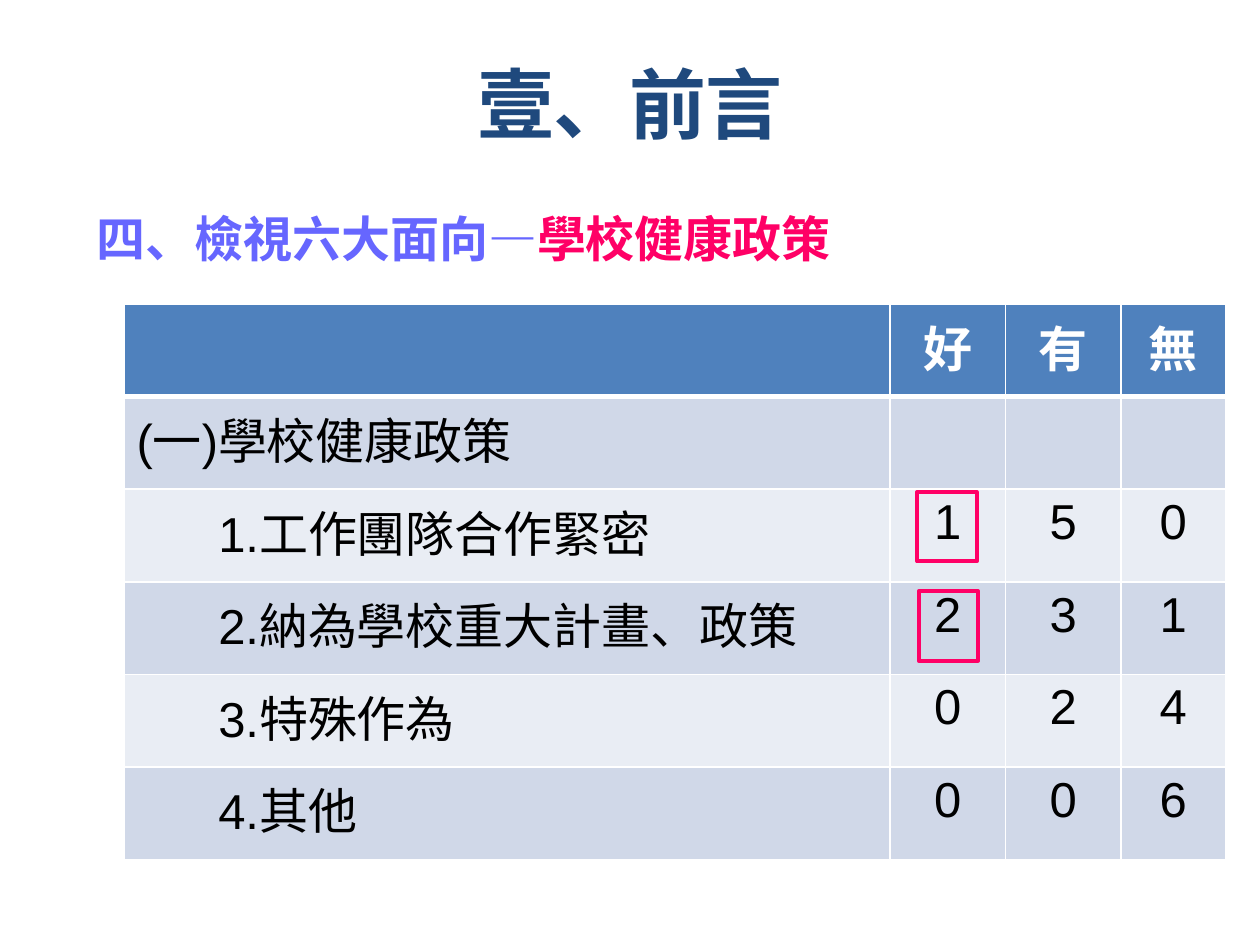
from lxml.etree import SubElement
from pptx import Presentation
from pptx.dml.color import RGBColor
from pptx.enum.shapes import MSO_SHAPE
from pptx.enum.text import MSO_ANCHOR, PP_ALIGN
from pptx.oxml import parse_xml
from pptx.oxml.ns import nsdecls
from pptx.util import Cm, Pt

COLORS = {
    "title": "1F497D",
    "heading": "6666FF",
    "accent": "FF0066",
    "header": "4F81BD",
    "band_dark": "D0D8E8",
    "band_light": "E9EDF4",
    "white": "FFFFFF",
    "black": "000000",
}

HEADER = ["", "好", "有", "無"]
SECTION = ["(一)學校健康政策", "", "", ""]
ITEMS = [
    ["1.工作團隊合作緊密", "1", "5", "0"],
    ["2.納為學校重大計畫、政策", "2", "3", "1"],
    ["3.特殊作為", "0", "2", "4"],
    ["4.其他", "0", "0", "6"],
]
COLUMN_WIDTHS = [15.44, 2.33, 2.33, 2.1]


def rgb(name):
    return RGBColor.from_string(COLORS[name])


def add_text(para, text, size=28, font="Arial", color="black", bold=False, spacing=None):
    span = para.add_run()
    span.text = text
    span.font.size = Pt(size)
    span.font.name = font
    span.font.bold = bold
    span.font.color.rgb = rgb(color)
    if spacing is not None:
        span.font._element.set("spc", str(round(spacing * 100)))


def place_title(page, left, top, width, height):
    title = page.shapes.title
    title.left, title.top, title.width, title.height = map(Cm, (left, top, width, height))
    title.text_frame.vertical_anchor = MSO_ANCHOR.BOTTOM
    para = title.text_frame.paragraphs[0]
    para.alignment = PP_ALIGN.CENTER
    add_text(para, "壹、前言", size=44, font="Times New Roman",
             color="title", bold=True, spacing=-0.6)


def add_heading(page, left, top, width, height):
    box = page.shapes.add_textbox(*map(Cm, (left, top, width, height)))
    box.text_frame.word_wrap = True
    para = box.text_frame.paragraphs[0]
    para.line_spacing = 1.3
    for text, color in (("四、檢視六大面向—", "heading"), ("學校健康政策", "accent")):
        add_text(para, text, font="Times New Roman", color=color, bold=True)


def set_borders(cell, bottom, top):
    properties = cell._tc.get_or_add_tcPr()
    widths = {"lnL": 1, "lnR": 1, "lnT": top, "lnB": bottom}
    for position, (tag, width) in enumerate(widths.items()):
        line = parse_xml(f'<a:{tag} {nsdecls("a")} w="{Pt(width)}"/>')
        fill = SubElement(line, line.tag.replace(tag, "solidFill"))
        SubElement(fill, line.tag.replace(tag, "srgbClr"), val=COLORS["white"])
        properties.insert(position, line)


def add_score_table(page, left, top, width, height):
    rows = [HEADER, SECTION, *ITEMS]
    frame = page.shapes.add_table(len(rows), len(HEADER), *map(Cm, (left, top, width, height)))
    table = frame.table
    for column, column_width in zip(table.columns, COLUMN_WIDTHS):
        column.width = Cm(column_width)
    for row_index, values in enumerate(rows):
        is_header = row_index == 0
        band = "header" if is_header else ("band_light", "band_dark")[row_index % 2]
        for column_index, value in enumerate(values):
            cell = table.cell(row_index, column_index)
            cell.fill.solid()
            cell.fill.fore_color.rgb = rgb(band)
            set_borders(cell, bottom=3 if is_header else 1, top=3 if row_index == 1 else 1)
            if column_index == 0 and row_index > 1:
                cell.margin_left = Cm(1.9)
            if value:
                para = cell.text_frame.paragraphs[0]
                para.alignment = PP_ALIGN.CENTER if column_index else PP_ALIGN.LEFT
                add_text(para, value, color="white" if is_header else "black", bold=is_header)


def add_highlight(page, left, top, width, height):
    box = page.shapes.add_shape(MSO_SHAPE.RECTANGLE, *map(Cm, (left, top, width, height)))
    box.shadow.inherit = False
    box.fill.background()
    box.line.color.rgb = rgb("accent")
    box.line.width = Pt(2.25)


def main():
    deck = Presentation()
    deck.slide_width, deck.slide_height = Cm(25.4), Cm(19.05)
    page = deck.slides.add_slide(deck.slide_layouts[5])
    place_title(page, 0.7, 0.82, 24, 2.3)
    add_heading(page, 1.7, 3.73, 19.4, 2)
    add_score_table(page, 2.5, 6.13, sum(COLUMN_WIDTHS), 11.2)
    for left, top in ((18.49, 9.92), (18.52, 11.92)):
        add_highlight(page, left, top, 1.2, 1.4)
    deck.save("out.pptx")


if __name__ == "__main__":
    main()
